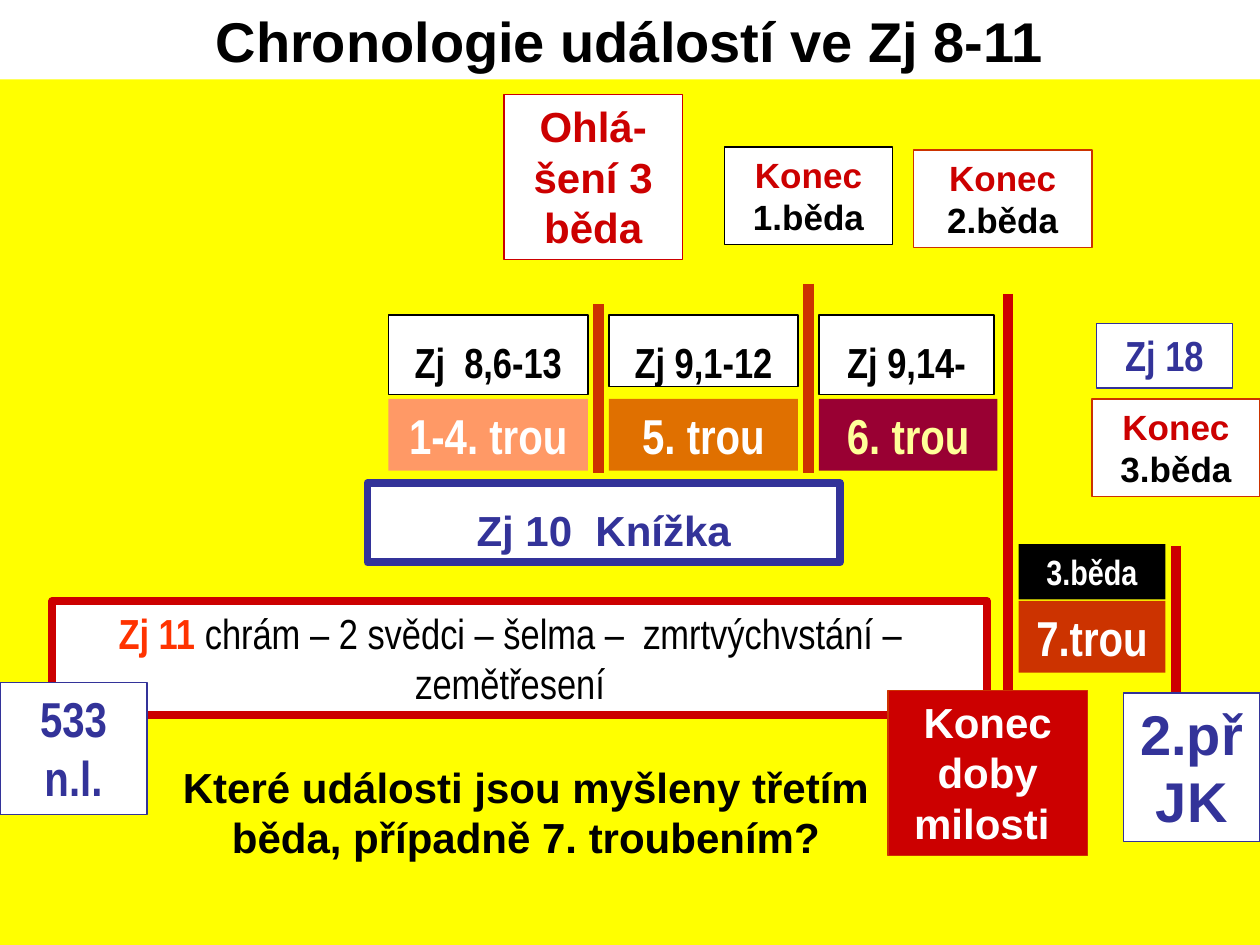
from lxml import etree
from pptx import Presentation
from pptx import util as u
from pptx.dml.color import RGBColor
from pptx.enum import shapes, text
from pptx.oxml.ns import qn

THEME = {
    "yellow": "FFFF00", "white": "FFFFFF", "black": "000000", "blue": "333399",
    "red": "CC0000", "rust": "CC3300", "scarlet": "FF3300", "salmon": "FF9966",
    "orange": "E07000", "wine": "990033", "cream": "FFFF99",
    "wide": "Arial", "narrow": "Arial Narrow",
    "title": 32, "large": 28, "body": 24, "small": 20,
    "thin": 0.75, "frame": 4.5, "bar": 6,
}

# Content: places are (left, top, width, height) in points
TITLE = "Chronologie událostí ve Zj 8-11"
QUESTION = "Které události jsou myšleny třetím běda, případně 7. troubením?"

# left, chapter width, chapter height, chapter, trumpet width, trumpet, fill, text colour
TRUMPETS = [
    (222, 114, 45.4, "Zj  8,6-13", 114, "1-4. trou", "salmon", "white"),
    (348, 108, 41, "Zj 9,1-12", 108, "5. trou", "orange", "white"),
    (468, 100, 45.4, "Zj 9,14-", 102, "6. trou", "wine", "cream"),
]
CHAPTER_TOP, TRUMPET_TOP, TRUMPET_HEIGHT = 180, 228, 41

# x, top, bottom, colour
BARS = [
    (342, 174, 270, "rust"),
    (462, 162, 270, "rust"),
    (576, 168, 396, "red"),
    (672, 312, 396, "red"),
]

# left, top, width, outline, woe
WOE_ENDS = [
    (414, 84, 96, "black", "1.běda"),
    (522, 85.7, 102, "rust", "2.běda"),
    (624, 228, 96, "rust", "3.běda"),
]
WOE_HEIGHT = 55.7

# place, text, format
EVENTS = [
    ((210, 276, 270, 45.4), "Zj 10  Knížka",
     dict(line="blue", weight="frame", color="blue", spacing=1.3)),
    ((30, 343.4, 534, 65.4),
     [("Zj 11 ", "scarlet", True),
      ("chrám – 2 svědci – šelma –  zmrtvýchvstání –   zemětřesení  ", "black", False)],
     dict(line="red", weight="frame", font="narrow")),
    ((0, 390, 84, 75.4), "533 n.l.",
     dict(line="blue", color="blue", font="narrow", size="large")),
    ((288, 54, 102, 94.3), "Ohlá-šení 3 běda", dict(line="red", color="red")),
    ((642, 396, 78, 85), "2.přJK", dict(line="blue", color="blue", size="title")),
    ((507.4, 394.4, 114, 94.3), "Konec doby milosti ",
     dict(fill="red", line="rust", color="white")),
    ((582, 311, 84, 31.5), "3.běda",
     dict(fill="black", color="white", font="narrow", size="small")),
    ((582, 343.4, 84, TRUMPET_HEIGHT), "7.trou",
     dict(fill="rust", color="white", font="narrow", size="large")),
    ((626.4, 185, 78, 36.7), "Zj 18", dict(line="blue", color="blue", font="narrow")),
]


def rgb(name):
    return RGBColor.from_string(THEME[name])


def add_box(page, place, content, fill="white", line=None, weight="thin",
            color="black", font="wide", size="body", spacing=None):
    """Add a rectangle with centred text; content is a string or (text, colour, bold) runs."""
    box = page.shapes.add_shape(shapes.MSO_SHAPE.RECTANGLE, *map(u.Pt, place))
    box.shadow.inherit = False
    box.fill.solid()
    box.fill.fore_color.rgb = rgb(fill)
    if line:
        box.line.color.rgb = rgb(line)
        box.line.width = u.Pt(THEME[weight])
    else:
        box.line.fill.background()
    write(box.text_frame, content, color, font, size, spacing)


def write(frame, content, color="black", font="wide", size="body", spacing=None):
    frame.word_wrap = True
    frame.vertical_anchor = text.MSO_ANCHOR.TOP
    para = frame.paragraphs[0]
    para.alignment = text.PP_ALIGN.CENTER
    if spacing:
        para.line_spacing = spacing
    runs = [(content, color, True)] if isinstance(content, str) else content
    for words, shade, bold in runs:
        span = para.add_run()
        span.text = words
        span.font.name = THEME[font]
        span.font.size = u.Pt(THEME[size])
        span.font.bold = bold
        span.font.color.rgb = rgb(shade)


def add_bar(page, x, top, bottom, color):
    bar = page.shapes.add_connector(
        shapes.MSO_CONNECTOR.STRAIGHT, *map(u.Pt, (x, top, x, bottom)))
    bar.line.color.rgb = rgb(color)
    bar.line.width = u.Pt(THEME["bar"])
    etree.SubElement(bar._element.spPr, qn("a:effectLst"))


def main():
    deck = Presentation()
    deck.slide_width, deck.slide_height = u.Pt(720), u.Pt(540)
    page = deck.slides.add_slide(deck.slide_layouts[6])
    page.background.fill.solid()
    page.background.fill.fore_color.rgb = rgb("yellow")

    add_box(page, (0, 0, 720, 45.4), TITLE, size="title")

    # Dividing bars lie behind the boxes
    for bar in BARS:
        add_bar(page, *bar)

    # Chapters above their trumpets
    for left, width, height, chapter, trumpet_width, trumpet, fill, color in TRUMPETS:
        add_box(page, (left, CHAPTER_TOP, width, height), chapter,
                line="black", font="narrow", spacing=1.3)
        add_box(page, (left, TRUMPET_TOP, trumpet_width, TRUMPET_HEIGHT), trumpet,
                fill=fill, color=color, font="narrow", size="large")

    # Ends of the three woes
    for left, top, width, line, woe in WOE_ENDS:
        add_box(page, (left, top, width, WOE_HEIGHT),
                [("Konec ", "red", True), (woe, "black", True)], line=line, size="small")

    # Other events
    for place, content, style in EVENTS:
        add_box(page, place, content, **style)

    # Closing question
    question = page.shapes.add_textbox(*map(u.Pt, (87.6, 431.4, 426, 65.4)))
    write(question.text_frame, QUESTION)

    deck.save("out.pptx")


if __name__ == "__main__":
    main()
